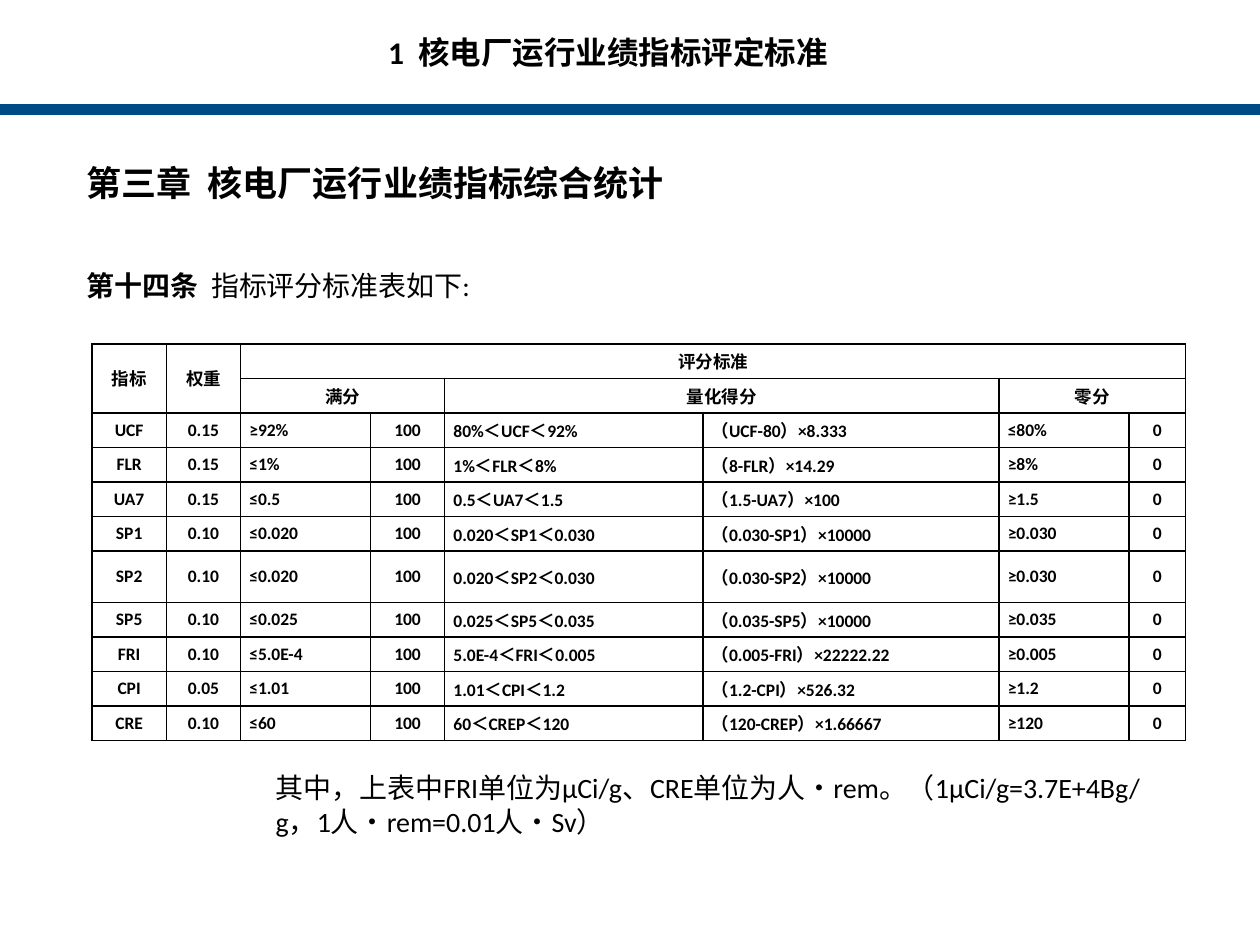
from lxml.etree import SubElement
from pptx import Presentation
from pptx.dml.color import RGBColor
from pptx.enum.shapes import MSO_SHAPE
from pptx.enum.text import MSO_ANCHOR, PP_ALIGN
from pptx.oxml.ns import qn
from pptx.util import Inches, Pt

BLACK = RGBColor(0x00, 0x00, 0x00)
BLUE = RGBColor(0x00, 0x4A, 0x86)
LATIN_FONT = "Calibri"
CHINESE_FONT = "Noto Sans CJK SC"

COLUMN_WIDTHS = [0.59, 0.59, 1.03, 0.59, 2.05, 2.35, 1.03, 0.45]
LEFT_ALIGNED_COLUMNS = {2, 4, 5, 6}
HEADER_ROWS = 2
ROW_HEIGHT = 0.274
TALL_ROW, TALL_HEIGHT = 6, 0.41

# Header cells: row, column, rows spanned, columns spanned, text
HEADERS = [
    (0, 0, 2, 1, "指标"),
    (0, 1, 2, 1, "权重"),
    (0, 2, 1, 6, "评分标准"),
    (1, 2, 1, 2, "满分"),
    (1, 4, 1, 2, "量化得分"),
    (1, 6, 1, 2, "零分"),
]

# Indicator, weight, full-score limit, scored range, formula, zero-score limit
INDICATORS = [
    ("UCF", "0.15", "≥92%", "80%＜UCF＜92%", "（UCF-80）×8.333", "≤80%"),
    ("FLR", "0.15", "≤1%", "1%＜FLR＜8%", "（8-FLR）×14.29", "≥8%"),
    ("UA7", "0.15", "≤0.5", "0.5＜UA7＜1.5", "（1.5-UA7）×100", "≥1.5"),
    ("SP1", "0.10", "≤0.020", "0.020＜SP1＜0.030", "（0.030-SP1）×10000", "≥0.030"),
    ("SP2", "0.10", "≤0.020", "0.020＜SP2＜0.030", "（0.030-SP2）×10000", "≥0.030"),
    ("SP5", "0.10", "≤0.025", "0.025＜SP5＜0.035", "（0.035-SP5）×10000", "≥0.035"),
    ("FRI", "0.10", "≤5.0E-4", "5.0E-4＜FRI＜0.005", "（0.005-FRI）×22222.22", "≥0.005"),
    ("CPI", "0.05", "≤1.01", "1.01＜CPI＜1.2", "（1.2-CPI）×526.32", "≥1.2"),
    ("CRE", "0.10", "≤60", "60＜CREP＜120", "（120-CREP）×1.66667", "≥120"),
]


class SlideBuilder:
    """Holds the text style and the slide being built."""

    def __init__(self, presentation):
        self.slide = presentation.slides.add_slide(presentation.slide_layouts[5])
        self.text_format = {"name": LATIN_FONT, "size": Pt(16), "bold": False}

    def add_run(self, paragraph, text, **changes):
        run = paragraph.add_run()
        run.text = text
        for name, value in {**self.text_format, **changes}.items():
            setattr(run.font, name, value)
        run.font.color.rgb = BLACK
        SubElement(run.font._element, qn("a:ea"), typeface=CHINESE_FONT)

    def place(self, shape, left, top, width, height):
        for name, value in zip(("left", "top", "width", "height"),
                               (left, top, width, height)):
            setattr(shape, name, Inches(value))

    def title(self, text, *box):
        title = self.slide.shapes.title
        self.place(title, *box)
        title.text_frame.word_wrap = False
        title.text_frame.vertical_anchor = MSO_ANCHOR.MIDDLE
        paragraph = title.text_frame.paragraphs[0]
        paragraph.alignment = PP_ALIGN.CENTER
        self.add_run(paragraph, text, size=Pt(18), bold=True)

    def bar(self, color, *box):
        bar = self.slide.shapes.add_shape(MSO_SHAPE.RECTANGLE, *map(Inches, box))
        bar.shadow.inherit = False
        bar.fill.solid()
        bar.fill.fore_color.rgb = color
        bar.line.color.rgb = color
        bar.line.width = Pt(2)

    def text_box(self, *box):
        frame = self.slide.shapes.add_textbox(*map(Inches, box)).text_frame
        frame.word_wrap = True
        return frame

    def cell(self, cell, text, alignment):
        margins = {"margin_left": 0.07, "margin_right": 0.07,
                   "margin_top": 0, "margin_bottom": 0}
        for name, value in margins.items():
            setattr(cell, name, Inches(value))
        cell.vertical_anchor = MSO_ANCHOR.MIDDLE
        paragraph = cell.text_frame.paragraphs[0]
        paragraph.alignment = alignment
        self.add_run(paragraph, text, size=Pt(10), bold=True)

    def cell_border(self, cell):
        properties = cell._tc.get_or_add_tcPr()
        for side in ("lnL", "lnR", "lnT", "lnB"):
            line = SubElement(properties, qn(f"a:{side}"), w=str(Pt(1)))
            fill = SubElement(line, qn("a:solidFill"))
            SubElement(fill, qn("a:srgbClr"), val=str(BLACK))
        cell.fill.background()

    def score_table(self, left, top):
        row_count = HEADER_ROWS + len(INDICATORS)
        heights = [ROW_HEIGHT] * row_count
        heights[TALL_ROW] = TALL_HEIGHT
        table = self.slide.shapes.add_table(
            row_count, len(COLUMN_WIDTHS), Inches(left), Inches(top),
            Inches(sum(COLUMN_WIDTHS)), Inches(sum(heights))).table
        table.first_row = table.horz_banding = False
        for column, width in zip(table.columns, COLUMN_WIDTHS):
            column.width = Inches(width)
        for row, height in zip(table.rows, heights):
            row.height = Inches(height)
        for cell in table.iter_cells():
            self.cell_border(cell)

        # Header
        for row, column, row_span, column_span, text in HEADERS:
            first = table.cell(row, column)
            first.merge(table.cell(row + row_span - 1, column + column_span - 1))
            self.cell(first, text, PP_ALIGN.CENTER)

        # Indicators, with full marks and zero marks filled in
        for row, (name, weight, full, span, formula, zero) in enumerate(
                INDICATORS, HEADER_ROWS):
            values = (name, weight, full, "100", span, formula, zero, "0")
            for column, text in enumerate(values):
                left_aligned = column in LEFT_ALIGNED_COLUMNS
                self.cell(table.cell(row, column), text,
                          PP_ALIGN.LEFT if left_aligned else PP_ALIGN.CENTER)


def main():
    presentation = Presentation()
    presentation.slide_width = Inches(10)
    presentation.slide_height = Inches(7.5)
    builder = SlideBuilder(presentation)

    # Title and rule
    builder.bar(BLUE, 0, 0.84, 10, 0.06)
    builder.title("1  核电厂运行业绩指标评定标准", 2.95, 0.21, 3.75, 0.4)

    # Chapter heading and article
    frame = builder.text_box(0.59, 1.07, 9.13, 1.87)
    chapter = frame.paragraphs[0]
    builder.add_run(chapter, "第三章  核电厂运行业绩指标综合统计",
                    name=CHINESE_FONT, size=Pt(20), bold=True)
    article = frame.add_paragraph()
    article.space_before = Pt(27)
    builder.add_run(article, "第十四条  ", bold=True)
    builder.add_run(article, "指标评分标准表如下:")
    for paragraph in (chapter, article):
        paragraph.line_spacing = 1.5

    # Scoring table
    builder.score_table(0.73, 2.73)

    # Note on units
    note = builder.text_box(2.09, 6.07, 7.17, 0.64).paragraphs[0]
    builder.add_run(note, "其中，上表中FRI单位为µCi/g、CRE单位为人•rem。"
                          "（1µCi/g=3.7E+4Bg/g，1人•rem=0.01人•Sv）")

    presentation.save("out.pptx")


if __name__ == "__main__":
    main()
